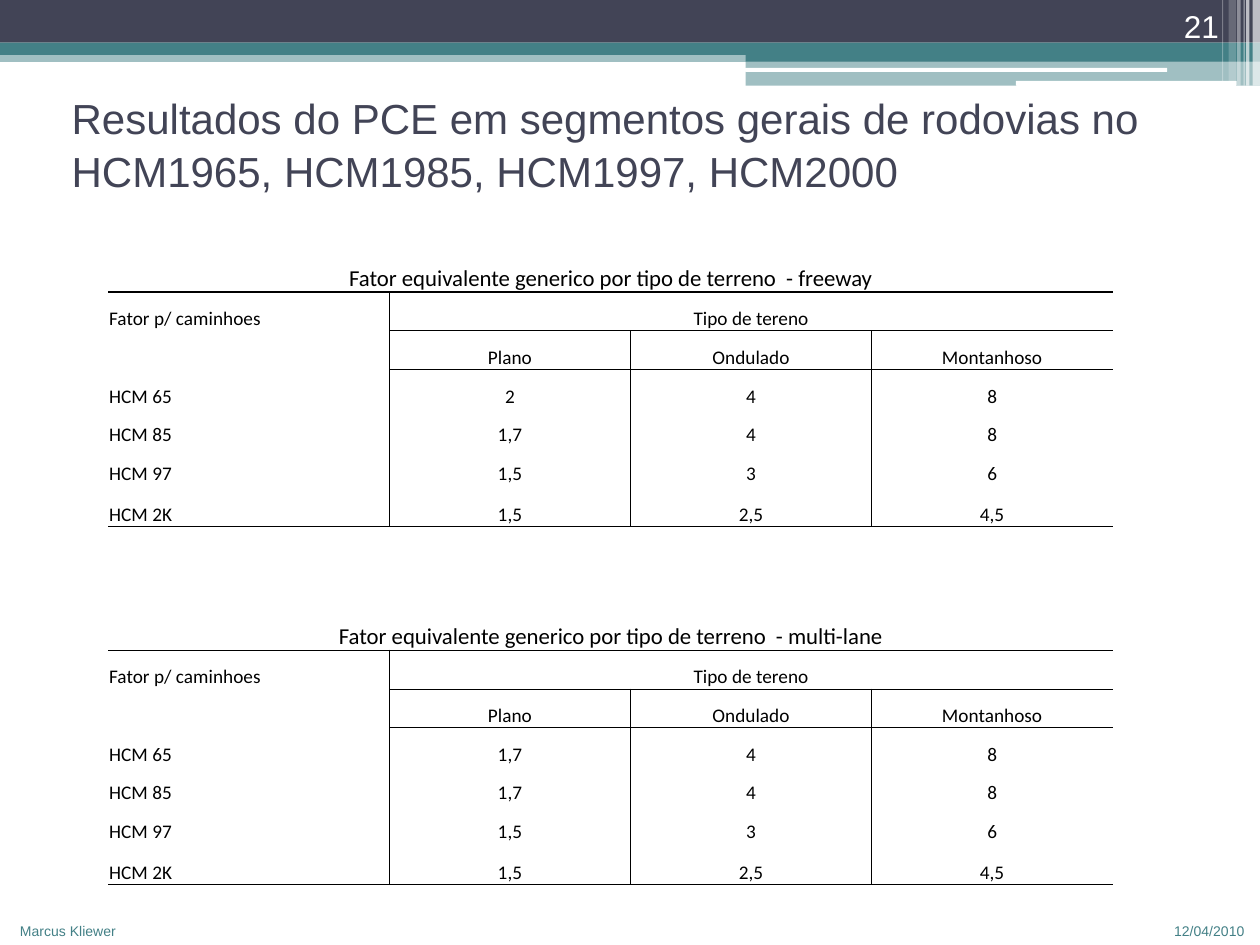
"""Build the slide on PCE results for general highway segments."""
from lxml import etree
from pptx import Presentation
from pptx.dml.color import RGBColor
from pptx.enum.shapes import MSO_SHAPE as SHAPE
from pptx.enum.text import MSO_ANCHOR as ANCHOR, PP_ALIGN as ALIGN
from pptx.oxml.ns import qn
from pptx.util import Cm, Pt


def color(value):
    """Turn a hex string into a colour."""
    return RGBColor.from_string(value)


def write(tf, text, size, c, align=ALIGN.LEFT, font="Arial"):
    """Put one formatted run into a text frame."""
    p = tf.paragraphs[0]
    p.alignment = align
    r = p.add_run()
    r.text = text
    for key, value in {"name": font, "size": Pt(size), "bold": False}.items():
        setattr(r.font, key, value)
    r.font.color.rgb = color(c)


NAVY, TEAL, WHITE, BLACK = "424456", "438086", "FFFFFF", "000000"

prs = Presentation()
prs.slide_width, prs.slide_height = Cm(25.4), Cm(19.05)
s = prs.slides.add_slide(prs.slide_layouts[5])

bands = [
    (SHAPE.RECTANGLE, 0, 1.02, 25.4, 0.23, TEAL, 50),
    (SHAPE.RECTANGLE, 0, 0, 25.4, 0.86, NAVY, 100),
    (SHAPE.RECTANGLE, 0, 0.86, 25.4, 0.25, TEAL, 100),
    (SHAPE.RECTANGLE, 15.03, 0.99, 10.37, 0.25, TEAL, 100),
    (SHAPE.RECTANGLE, 15.03, 1.23, 10.37, 0.5, TEAL, 50),
    (SHAPE.ROUNDED_RECTANGLE, 15.02, 1.37, 8.51, 0.08, WHITE, 100),
    (SHAPE.ROUNDED_RECTANGLE, 20.48, 1.63, 4.45, 0.1, WHITE, 100),
]
stripes = [
    (25.25, 0.15, 1.73, 65), (25.12, 0.07, 1.73, 65), (25.07, 0.02, 1.73, 60),
    (24.94, 0.07, 1.73, 40), (24.77, 0.15, 1.63, 20), (24.64, 0.02, 1.63, 30),
]
bands += [(SHAPE.RECTANGLE, x, 0, w, h, WHITE, alpha) for x, w, h, alpha in stripes]
for kind, x, y, w, h, c, alpha in bands:
    sp = s.shapes.add_shape(kind, Cm(x), Cm(y), Cm(w), Cm(h))
    sp.shadow.inherit = False
    sp.line.fill.background()
    sp.fill.solid()
    sp.fill.fore_color.rgb = color(c)
    if alpha < 100:
        clr = sp._element.spPr.find(".//" + qn("a:srgbClr"))
        etree.SubElement(clr, qn("a:alpha"), val=str(alpha * 1000))

title = s.shapes.title
box = {"left": Cm(1.19), "top": Cm(1.4), "width": Cm(22.86), "height": Cm(2.97)}
for key, value in box.items():
    setattr(title, key, value)
tf = title.text_frame
tf.word_wrap = True
tf.vertical_anchor = ANCHOR.MIDDLE
write(tf, "Resultados do PCE em segmentos gerais de rodovias no "
      "HCM1965, HCM1985, HCM1997, HCM2000", 24, NAVY)
tf.paragraphs[0].line_spacing = 1.05

labels = [
    ("12/04/2010", 23.42, 18.47, 1.98, 0.58, 8, TEAL, ALIGN.LEFT, ANCHOR.TOP),
    ("Marcus Kliewer", 0, 18.47, 2.59, 0.58, 8, TEAL, ALIGN.RIGHT, ANCHOR.TOP),
    ("21", 22.71, 0, 2.11, 1.02, 18, WHITE, ALIGN.RIGHT, ANCHOR.BOTTOM),
]
for text, x, y, w, h, size, c, align, anchor in labels:
    tf = s.shapes.add_textbox(Cm(x), Cm(y), Cm(w), Cm(h)).text_frame
    tf.word_wrap = True
    tf.vertical_anchor = anchor
    write(tf, text, size, c, align)

header = [["Fator p/ caminhoes", "Tipo de tereno", "", ""],
          ["", "Plano", "Ondulado", "Montanhoso"]]
common = [["HCM 85", "1,7", "4", "8"], ["HCM 97", "1,5", "3", "6"],
          ["HCM 2K", "1,5", "2,5", "4,5"]]
rows = []
for road, flat in [("freeway", "2"), ("multi-lane", "1,7")]:
    caption = f"Fator equivalente generico por tipo de terreno  - {road}"
    rows += [[caption, "", "", ""], *header, ["HCM 65", flat, "4", "8"], *common]
    if road == "freeway":
        rows += [[""] * 4] * 2

widths = [5.67, 4.86, 4.86, 4.86]
block = [0.94, 0.78, 0.78, 0.78, 0.78, 0.78, 0.82]
heights = block + [0.78, 0.78] + block
frame = s.shapes.add_table(len(rows), 4, Cm(2.18), Cm(4.95),
                           Cm(sum(widths)), Cm(sum(heights)))
table = frame.table
table.first_row = table.horz_banding = False
for col, w in zip(table.columns, widths):
    col.width = Cm(w)
for row, h in zip(table.rows, heights):
    row.height = Cm(h)

lines = {}
for top in (0, 9):
    for j in range(4):
        for i, width in {0: 1, 1: 0.5, 2: 0.5, 6: 1}.items():
            if j or width == 1:
                lines[top + i, j, "B"] = lines[top + i + 1, j, "T"] = width
    for i in range(top + 1, top + 7):
        for j in range(1 if i == top + 1 else 3):
            lines[i, j, "R"] = lines[i, j + 1, "L"] = 0.5

cell_format = {"margin_left": Cm(0.02), "margin_right": Cm(0.02), "margin_top": 0,
               "margin_bottom": 0, "vertical_anchor": ANCHOR.BOTTOM}
for i, texts in enumerate(rows):
    for j, text in enumerate(texts):
        cell = table.cell(i, j)
        for key, value in cell_format.items():
            setattr(cell, key, value)
        if text:
            caption = i in (0, 9)
            align = ALIGN.CENTER if caption or j else ALIGN.LEFT
            write(cell.text_frame, text, 13 if caption else 11, BLACK, align, "Calibri")
        tcPr = cell._tc.get_or_add_tcPr()
        for side in "LRTB":
            width = lines.get((i, j, side), 0)
            ln = etree.SubElement(tcPr, qn(f"a:ln{side}"), w=str(Pt(width)))
            if width:
                fill = etree.SubElement(ln, qn("a:solidFill"))
                etree.SubElement(fill, qn("a:srgbClr"), val=BLACK)
            else:
                etree.SubElement(ln, qn("a:noFill"))
        cell.fill.background()

for top in (0, 9):
    table.cell(top, 0).merge(table.cell(top, 3))
    table.cell(top + 1, 1).merge(table.cell(top + 1, 3))

prs.save("out.pptx")
